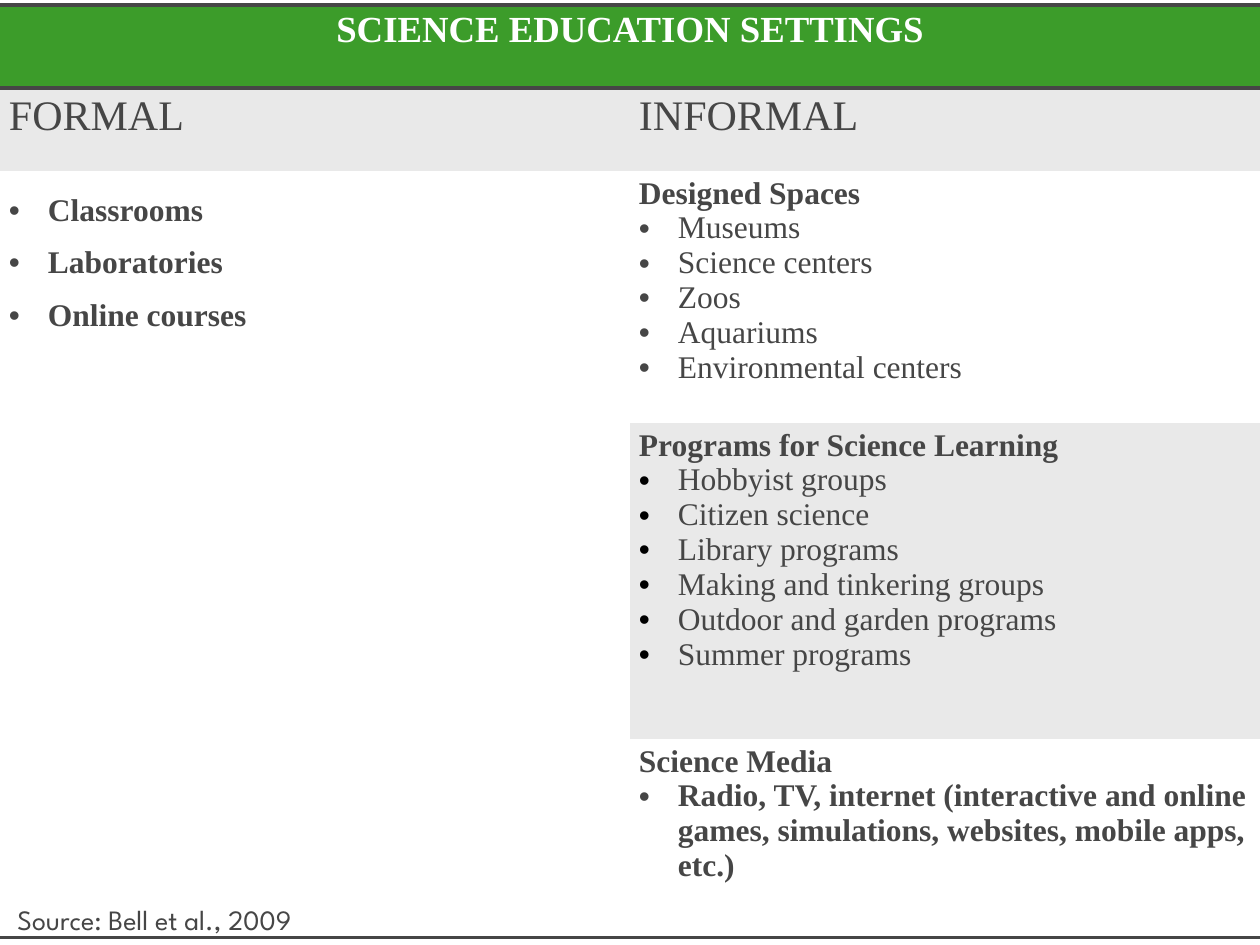
from lxml.etree import SubElement
from pptx import Presentation
from pptx.dml.color import RGBColor
from pptx.enum.text import MSO_AUTO_SIZE as AutoSize, PP_ALIGN as Align
from pptx.oxml import parse_xml
from pptx.oxml.ns import nsdecls, qn
from pptx.util import Emu, Pt

GREEN = RGBColor(0x3C, 0x9C, 0x2A)
GRAY = RGBColor(0xE9, 0xE9, 0xE9)
WHITE = RGBColor(0xFF, 0xFF, 0xFF)
DARK = RGBColor(0x46, 0x46, 0x46)
BLACK = RGBColor(0, 0, 0)

SERIF = "Times New Roman"
NO_GRID_STYLE = "{2D5ABB26-0587-4C30-8999-92F81FD0307C}"
COLUMNS = [630, 630]
ROWS = [83, 83, 252, 316, 199]

FORMAL = ["Classrooms", "Laboratories", "Online courses"]
SPACES = ["Museums", "Science centers", "Zoos", "Aquariums", "Environmental centers"]
PROGRAMS = [
    "Hobbyist groups",
    "Citizen science",
    "Library programs",
    "Making and tinkering groups",
    "Outdoor and garden programs",
    "Summer programs",
]
MEDIA = [
    "Radio, TV, internet (interactive and online games, "
    "simulations, websites, mobile apps, etc.)"
]


def px(length):
    """Turn pixels into EMU at 126 pixels to the inch."""
    return Emu(round(length * 914400 / 126))


def style_font(paragraph, size, color=DARK, bold=False, name=SERIF):
    """Set the font of a whole paragraph."""
    font = paragraph.font
    font.name, font.size, font.bold = name, Pt(size), bold
    font.color.rgb = color


def add_bullet(paragraph, color):
    """Give a paragraph a hanging round bullet."""
    properties = paragraph._p.get_or_add_pPr()
    properties.set("marL", str(px(39)))
    properties.set("indent", str(-px(39)))
    bullet_color = SubElement(properties, qn("a:buClr"))
    SubElement(bullet_color, qn("a:srgbClr")).set("val", str(color))
    SubElement(properties, qn("a:buFont")).set("typeface", "Arial")
    SubElement(properties, qn("a:buChar")).set("char", "•")


def write_title(cell, text, size, color=DARK, bold=False, align=Align.LEFT):
    """Write a one-line heading in a cell."""
    paragraph = cell.text_frame.paragraphs[0]
    paragraph.text = text
    paragraph.alignment = align
    style_font(paragraph, size, color, bold)


def write_list(cell, items, heading=None, bold=False, bullet=DARK, spacing=None):
    """Write bulleted items in a cell, under a bold heading if there is one."""
    frame = cell.text_frame
    lines = ([heading] if heading else []) + items
    for index, line in enumerate(lines):
        paragraph = frame.add_paragraph() if index else frame.paragraphs[0]
        paragraph.text = line
        if spacing:
            paragraph.line_spacing = spacing
        if line != heading:
            add_bullet(paragraph, bullet)
        style_font(paragraph, 18, bold=bold or line == heading)


def fill_cell(cell, color):
    """Fill a cell and set its margins."""
    cell.fill.solid()
    cell.fill.fore_color.rgb = color
    cell.margin_left = cell.margin_right = px(9)
    cell.margin_top = cell.margin_bottom = px(5)


def rule_cell(cell, *sides):
    """Draw dark rules on the given sides of a cell, in schema order."""
    properties = cell._tc.get_or_add_tcPr()
    for index, side in enumerate(sides):
        line = parse_xml(
            f'<a:ln{side} {nsdecls("a")} w="{Pt(2)}"><a:solidFill>'
            f'<a:srgbClr val="{DARK}"/></a:solidFill></a:ln{side}>'
        )
        properties.insert(index, line)


def add_settings_table(page):
    """Add the table of formal and informal settings."""
    shape = page.shapes.add_table(
        len(ROWS), len(COLUMNS), 0, px(5), px(sum(COLUMNS)), px(sum(ROWS))
    )
    table = shape.table
    table.first_row = table.horz_banding = False
    table._tbl.tblPr.find(qn("a:tableStyleId")).text = NO_GRID_STYLE
    for column, width in zip(table.columns, COLUMNS):
        column.width = px(width)
    for row, height in zip(table.rows, ROWS):
        row.height = px(height)

    fills = [(GREEN, GREEN), (GRAY, GRAY), (WHITE, WHITE), (WHITE, GRAY), (WHITE, WHITE)]
    for row, colors in enumerate(fills):
        for column, color in enumerate(colors):
            fill_cell(table.cell(row, column), color)
    for column in range(len(COLUMNS)):
        rule_cell(table.cell(0, column), "T", "B")
        rule_cell(table.cell(4, column), "B")
    rule_cell(table.cell(2, 0), "B")
    table.cell(0, 0).merge(table.cell(0, 1))
    table.cell(2, 0).merge(table.cell(4, 0))

    write_title(table.cell(0, 0), "SCIENCE EDUCATION SETTINGS", 21, WHITE, True, Align.CENTER)
    write_title(table.cell(1, 0), "FORMAL", 24)
    write_title(table.cell(1, 1), "INFORMAL", 24)
    write_list(table.cell(2, 0), FORMAL, bold=True, spacing=1.5)
    write_list(table.cell(2, 1), SPACES, "Designed Spaces")
    write_list(table.cell(3, 1), PROGRAMS, "Programs for Science Learning", bullet=BLACK)
    write_list(table.cell(4, 1), MEDIA, "Science Media", bold=True)


def add_source(page):
    """Add the source line at the bottom left."""
    box = page.shapes.add_textbox(px(5), px(896), px(420), px(47))
    frame = box.text_frame
    frame.word_wrap = True
    frame.auto_size = AutoSize.SHAPE_TO_FIT_TEXT
    paragraph = frame.paragraphs[0]
    paragraph.text = "Source: Bell et al., 2009"
    style_font(paragraph, 16, name="League Spartan")


def main():
    """Build the slide and save the deck."""
    deck = Presentation()
    deck.slide_width, deck.slide_height = px(1260), px(945)
    page = deck.slides.add_slide(deck.slide_layouts[6])
    add_settings_table(page)
    add_source(page)
    deck.save("out.pptx")


if __name__ == "__main__":
    main()
